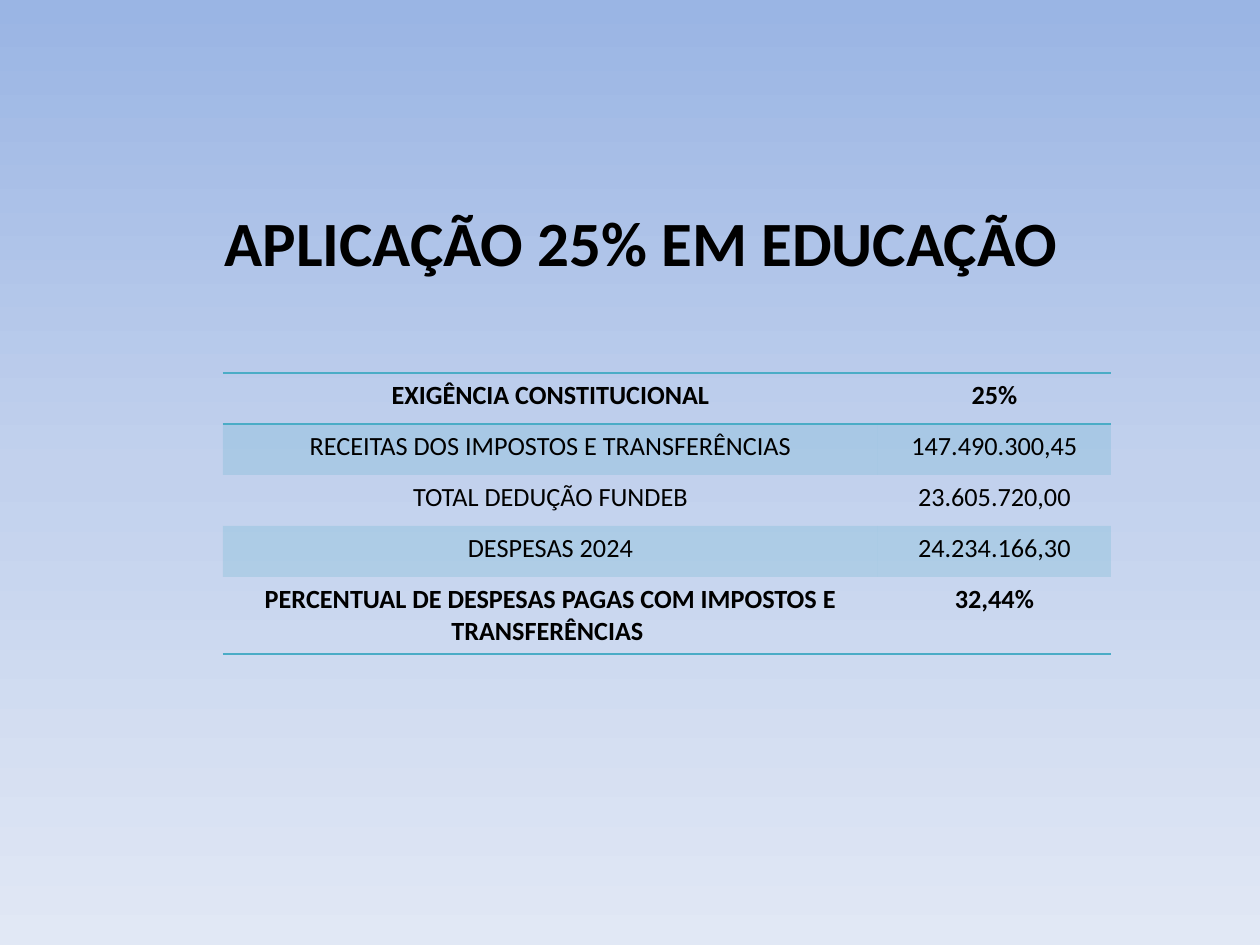
from copy import deepcopy
from dataclasses import dataclass

from lxml.etree import SubElement
from pptx import Presentation
from pptx.dml.color import RGBColor
from pptx.enum.text import MSO_ANCHOR as Anchor, PP_ALIGN as Align
from pptx.oxml.ns import qn
from pptx.util import Pt

EMU_PER_PX = 914400 / 126
PLAIN_TABLE_STYLE = "{2D5ABB26-0587-4C30-8999-92F81FD0307C}"


@dataclass(frozen=True)
class Theme:
    font: str = "Calibri"
    text: str = "000000"
    accent: str = "4BACC6"
    band_alpha: int = 20
    background: tuple = ((0, "9AB5E4"), (0.5, "C2D1ED"), (1, "E1E8F5"))
    title_size: int = 36
    table_size: int = 15
    border_width: int = 1


THEME = Theme()
ROWS = (
    ("EXIGÊNCIA CONSTITUCIONAL", "25%"),
    ("RECEITAS DOS IMPOSTOS E TRANSFERÊNCIAS", "147.490.300,45"),
    ("TOTAL DEDUÇÃO FUNDEB", "23.605.720,00"),
    ("DESPESAS 2024", "24.234.166,30"),
    ("PERCENTUAL DE DESPESAS PAGAS COM IMPOSTOS E TRANSFERÊNCIAS ", "32,44%"),
)


def px(value):
    return round(value * EMU_PER_PX)


def write_text(frame, text, size, bold=False, anchor=Anchor.TOP):
    frame.word_wrap = True
    frame.vertical_anchor = anchor
    paragraph = frame.paragraphs[0]
    paragraph.alignment = Align.CENTER
    run = paragraph.add_run()
    run.text = text
    run.font.name = THEME.font
    run.font.size = Pt(size)
    run.font.bold = bold
    run.font.color.rgb = RGBColor.from_string(THEME.text)


def paint_background(slide):
    fill = slide.background.fill
    fill.gradient()
    fill.gradient_angle = 270
    stop_list = slide.element.find(".//" + qn("a:gsLst"))
    stop_list.insert(1, deepcopy(stop_list[0]))
    for stop, (position, color) in zip(fill.gradient_stops, THEME.background):
        stop.position = position
        stop.color.rgb = RGBColor.from_string(color)


def place_title(slide, text, left, top, width, height):
    title = slide.shapes.title
    title.left, title.top, title.width, title.height = map(px, (left, top, width, height))
    write_text(title.text_frame, text, THEME.title_size, bold=True, anchor=Anchor.BOTTOM)


def fill_band(cell):
    cell.fill.solid()
    cell.fill.fore_color.rgb = RGBColor.from_string(THEME.accent)
    color = cell._tc.tcPr.find(".//" + qn("a:srgbClr"))
    SubElement(color, qn("a:alpha"), val=str(THEME.band_alpha * 1000))


def draw_borders(cell, tags):
    properties = cell._tc.get_or_add_tcPr()
    for index, tag in enumerate(tags):
        line = SubElement(properties, qn(tag), w=str(Pt(THEME.border_width)))
        fill = SubElement(line, qn("a:solidFill"))
        SubElement(fill, qn("a:srgbClr"), val=THEME.accent)
        properties.insert(index, line)


def place_table(slide, rows, left, top, column_widths, row_height):
    frame = slide.shapes.add_table(
        len(rows), len(column_widths), px(left), px(top),
        px(sum(column_widths)), px(row_height * len(rows)),
    )
    table = frame.table
    table._tbl.tblPr.find(qn("a:tableStyleId")).text = PLAIN_TABLE_STYLE
    for column, width in zip(table.columns, column_widths):
        column.width = px(width)
    last = len(rows) - 1
    borders = {0: ("a:lnT", "a:lnB"), last: ("a:lnB",)}
    for row_index, values in enumerate(rows):
        table.rows[row_index].height = px(row_height)
        for column_index, value in enumerate(values):
            cell = table.cell(row_index, column_index)
            write_text(cell.text_frame, value, THEME.table_size, bold=row_index in borders)
            if row_index % 2:
                fill_band(cell)
            else:
                cell.fill.background()
            draw_borders(cell, borders.get(row_index, ()))


def main():
    presentation = Presentation()
    presentation.slide_width, presentation.slide_height = px(1260), px(945)
    slide = presentation.slides.add_slide(presentation.slide_layouts[5])
    paint_background(slide)
    place_title(slide, "APLICAÇÃO 25% EM EDUCAÇÃO", 74, 96, 1134, 189)
    place_table(slide, ROWS, 223, 373, (655, 233), 51)
    presentation.save("out.pptx")


if __name__ == "__main__":
    main()
